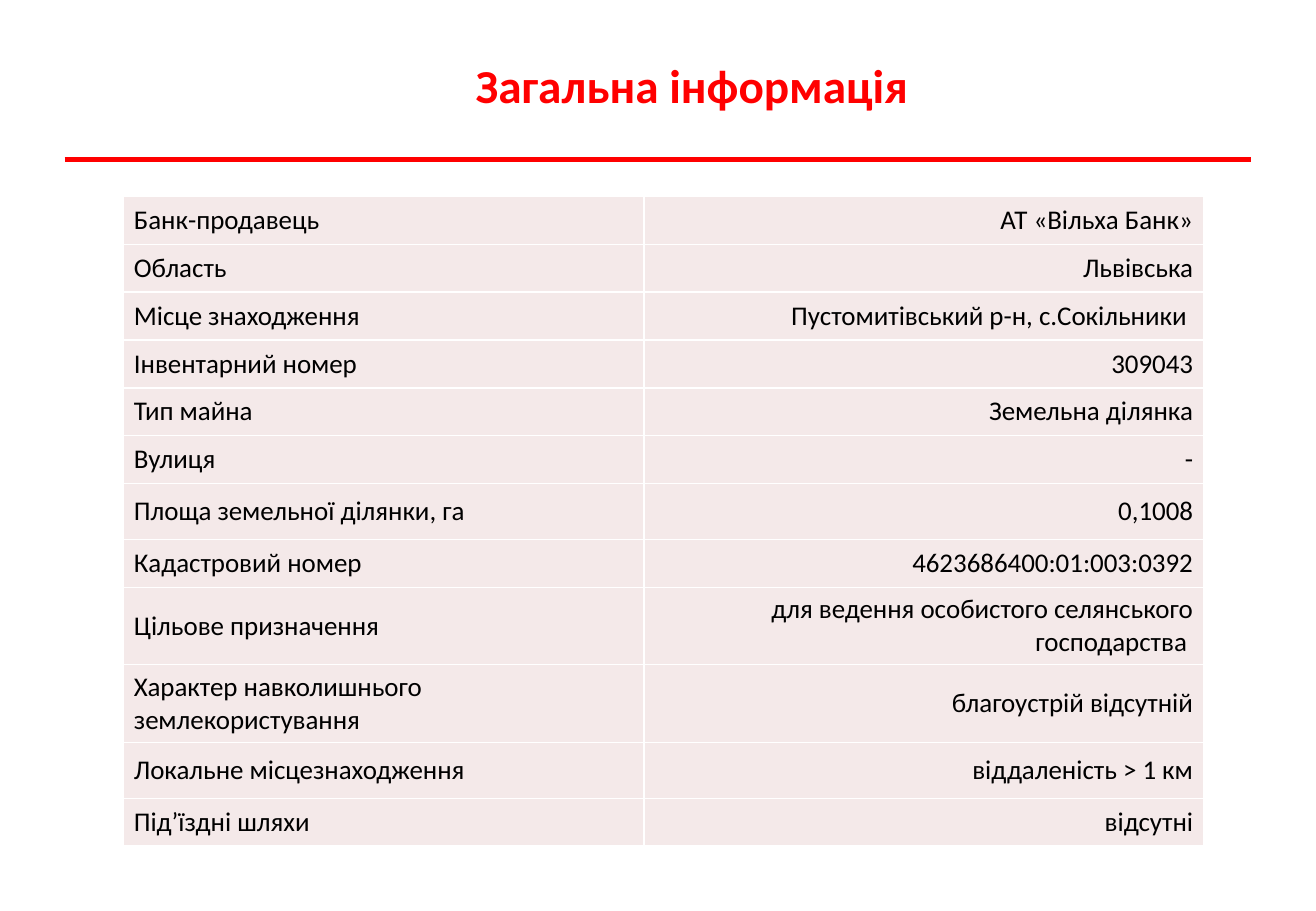
from typing import NamedTuple

from lxml.etree import SubElement
from pptx import Presentation
from pptx.dml.color import RGBColor
from pptx.enum.shapes import MSO_CONNECTOR
from pptx.enum.text import MSO_ANCHOR as Anchor, PP_ALIGN as Align
from pptx.oxml.ns import qn
from pptx.util import Cm, Pt

RED = RGBColor(0xFF, 0x00, 0x00)
BLACK = RGBColor(0x00, 0x00, 0x00)
WHITE = RGBColor(0xFF, 0xFF, 0xFF)
ROSE = RGBColor(0xF4, 0xE9, 0xE9)
FONT = "Calibri"

# Row heights in cm
NORMAL, TALL, DOUBLE = 1.0, 1.17, 1.61
COLUMN_WIDTHS = (10.9, 11.71)


class Fact(NamedTuple):
    label: str
    value: str
    height: float = NORMAL


FACTS = [
    Fact("Банк-продавець", "АТ «Вільха Банк»"),
    Fact("Область", "Львівська"),
    Fact("Місце знаходження", "Пустомитівський р-н, с.Сокільники "),
    Fact("Інвентарний номер", "309043"),
    Fact("Тип майна", "Земельна ділянка"),
    Fact("Вулиця", "-"),
    Fact("Площа земельної ділянки, га", "0,1008", TALL),
    Fact("Кадастровий номер", "4623686400:01:003:0392"),
    Fact("Цільове призначення", "для ведення особистого селянського господарства ", DOUBLE),
    Fact("Характер навколишнього землекористування", "благоустрій відсутній", DOUBLE),
    Fact("Локальне місцезнаходження", "віддаленість > 1 км", TALL),
    Fact("Під’їздні шляхи", "відсутні"),
]


def set_font(p, size: float, color: RGBColor, bold: bool = False) -> None:
    for r in p.runs:
        r.font.name = FONT
        r.font.size = Pt(size)
        r.font.bold = bold
        r.font.color.rgb = color


def add_title(s, text: str) -> None:
    sp = s.shapes.title
    sp.left, sp.top, sp.width, sp.height = Cm(4.37), Cm(0.74), Cm(20.19), Cm(2.06)
    tf = sp.text_frame
    tf.text = text
    tf.vertical_anchor = Anchor.MIDDLE
    p = tf.paragraphs[0]
    p.alignment = Align.CENTER
    set_font(p, 28, RED, bold=True)


def add_rule(s) -> None:
    line = s.shapes.add_connector(
        MSO_CONNECTOR.STRAIGHT, Cm(1.35), Cm(3.33), Cm(26.16), Cm(3.33))
    line.line.color.rgb = RED
    line.line.width = Pt(3)
    SubElement(line._element.spPr, qn("a:effectLst"))


def add_borders(cell) -> None:
    tc_pr = cell._tc.get_or_add_tcPr()
    for side in ("lnL", "lnR", "lnT", "lnB"):
        ln = SubElement(tc_pr, qn(f"a:{side}"), w=str(Pt(1)))
        fill = SubElement(ln, qn("a:solidFill"))
        SubElement(fill, qn("a:srgbClr"), val=str(WHITE))


def fill_cell(cell, text: str, align: Align) -> None:
    add_borders(cell)
    cell.fill.solid()
    cell.fill.fore_color.rgb = ROSE
    cell.vertical_anchor = Anchor.MIDDLE
    cell.margin_left = cell.margin_right = Cm(0.23)
    cell.margin_top = cell.margin_bottom = Cm(0.12)
    p = cell.text_frame.paragraphs[0]
    p.text = text
    p.alignment = align
    set_font(p, 16, BLACK)


def add_facts(s, facts: list[Fact]) -> None:
    table = s.shapes.add_table(
        len(facts), len(COLUMN_WIDTHS), Cm(2.57), Cm(4.11),
        Cm(sum(COLUMN_WIDTHS)), Cm(sum(f.height for f in facts))).table
    table.first_row = table.horz_banding = False
    for column, width in zip(table.columns, COLUMN_WIDTHS):
        column.width = Cm(width)
    for row, fact in zip(table.rows, facts):
        row.height = Cm(fact.height)
        fill_cell(row.cells[0], fact.label, Align.LEFT)
        fill_cell(row.cells[1], fact.value, Align.RIGHT)


def main() -> None:
    prs = Presentation()
    prs.slide_width, prs.slide_height = Cm(27.52), Cm(19.05)
    s = prs.slides.add_slide(prs.slide_layouts[5])

    # Heading with its red rule
    add_rule(s)
    add_title(s, "Загальна інформація")

    # Property details
    add_facts(s, FACTS)

    prs.save("out.pptx")


if __name__ == "__main__":
    main()
